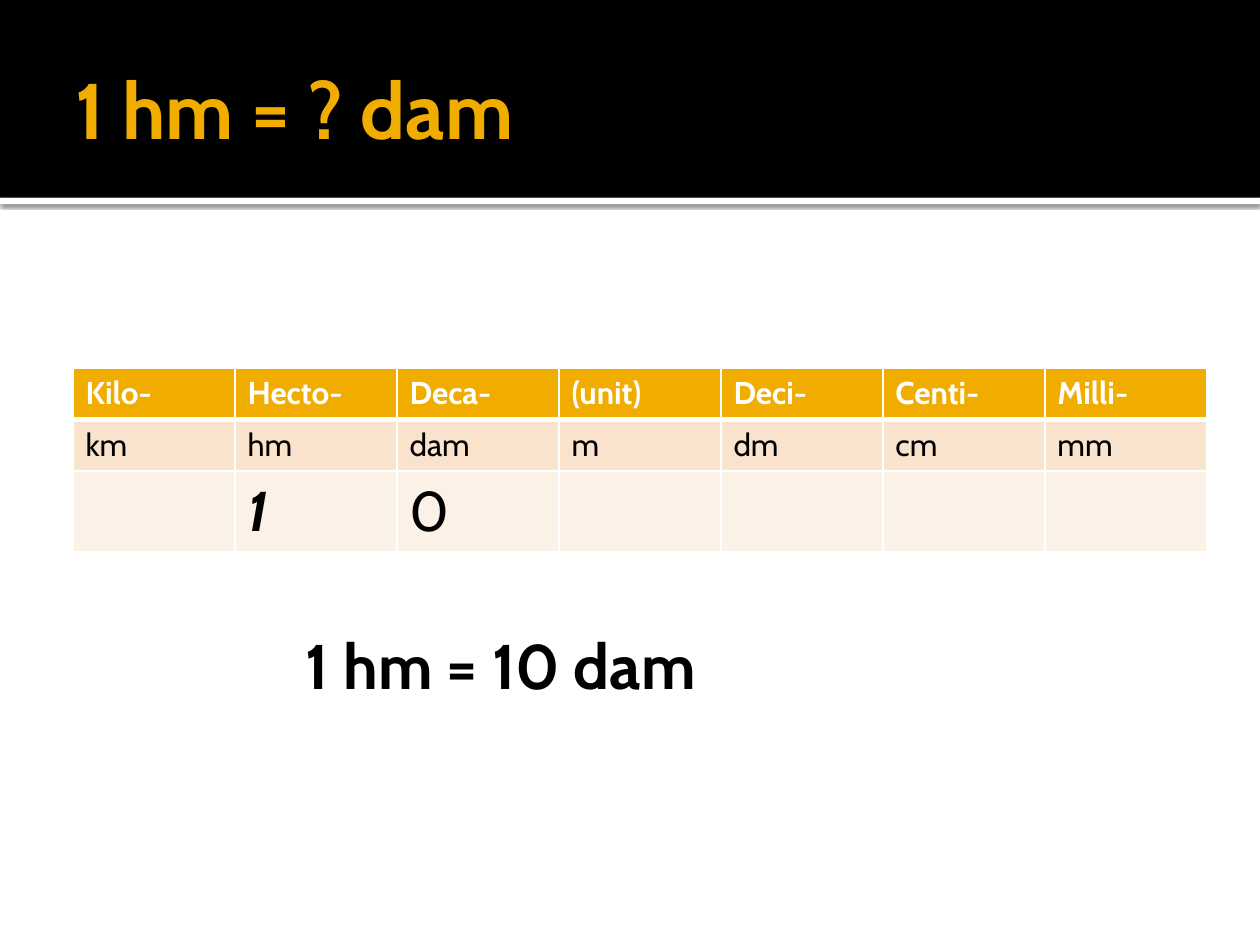
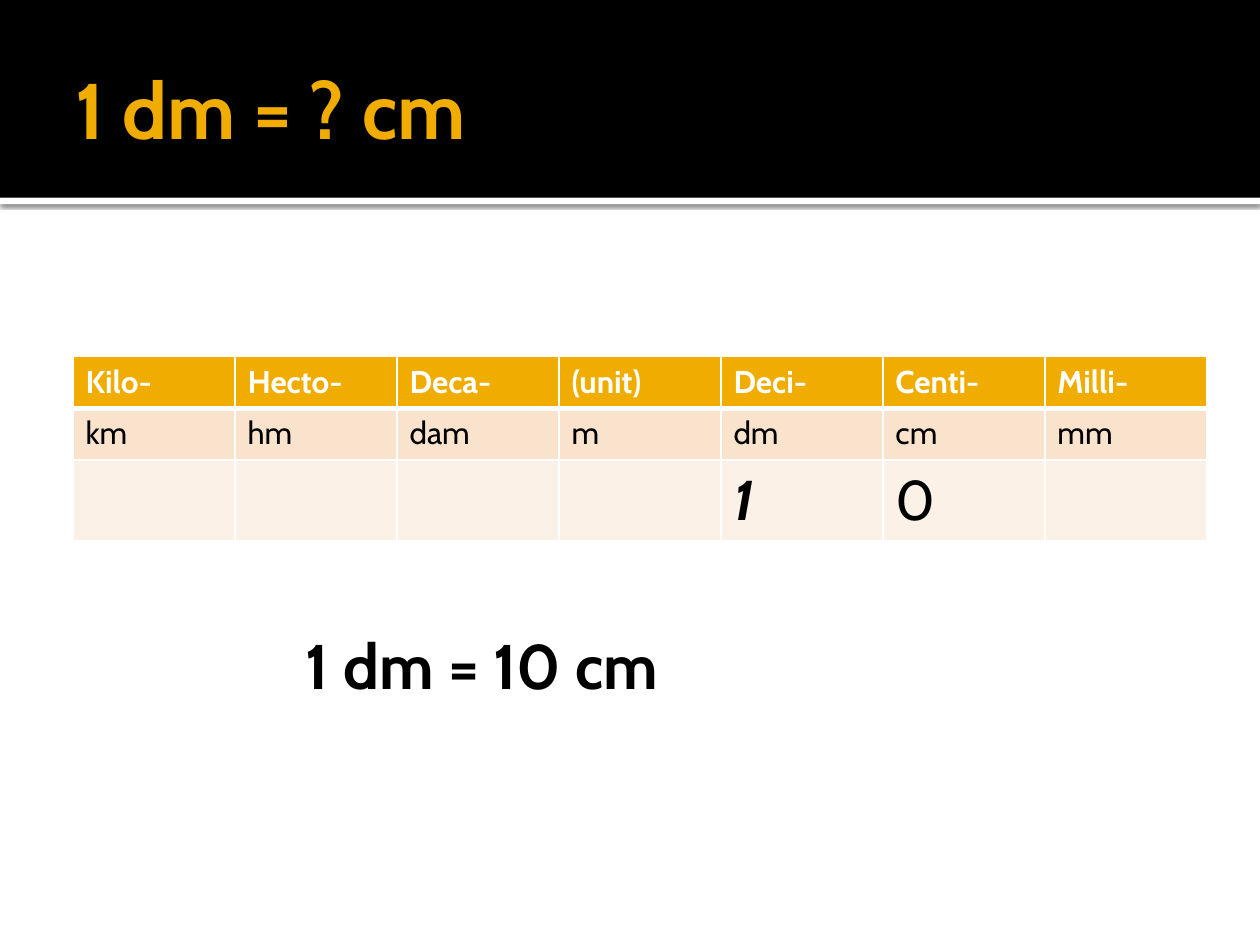
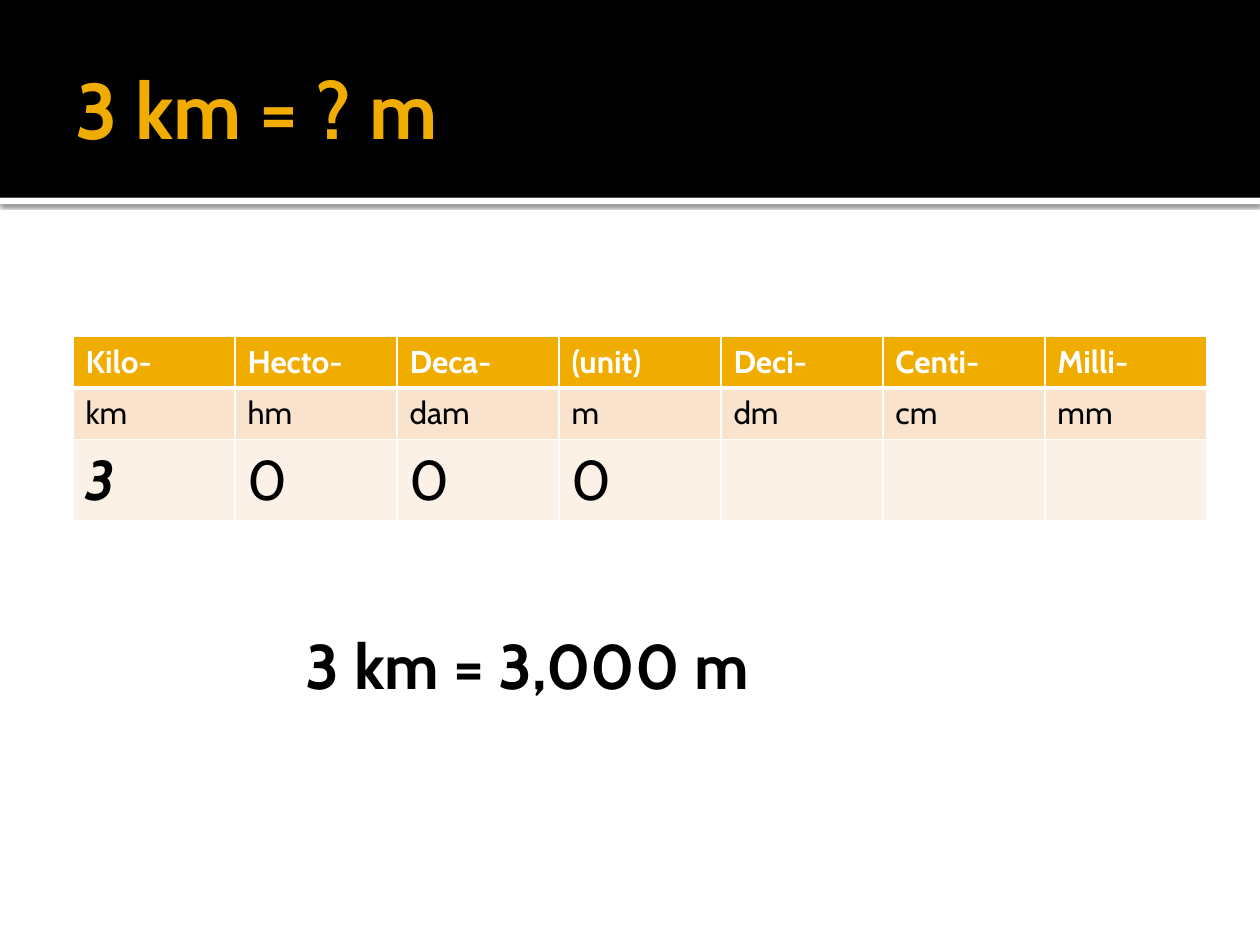
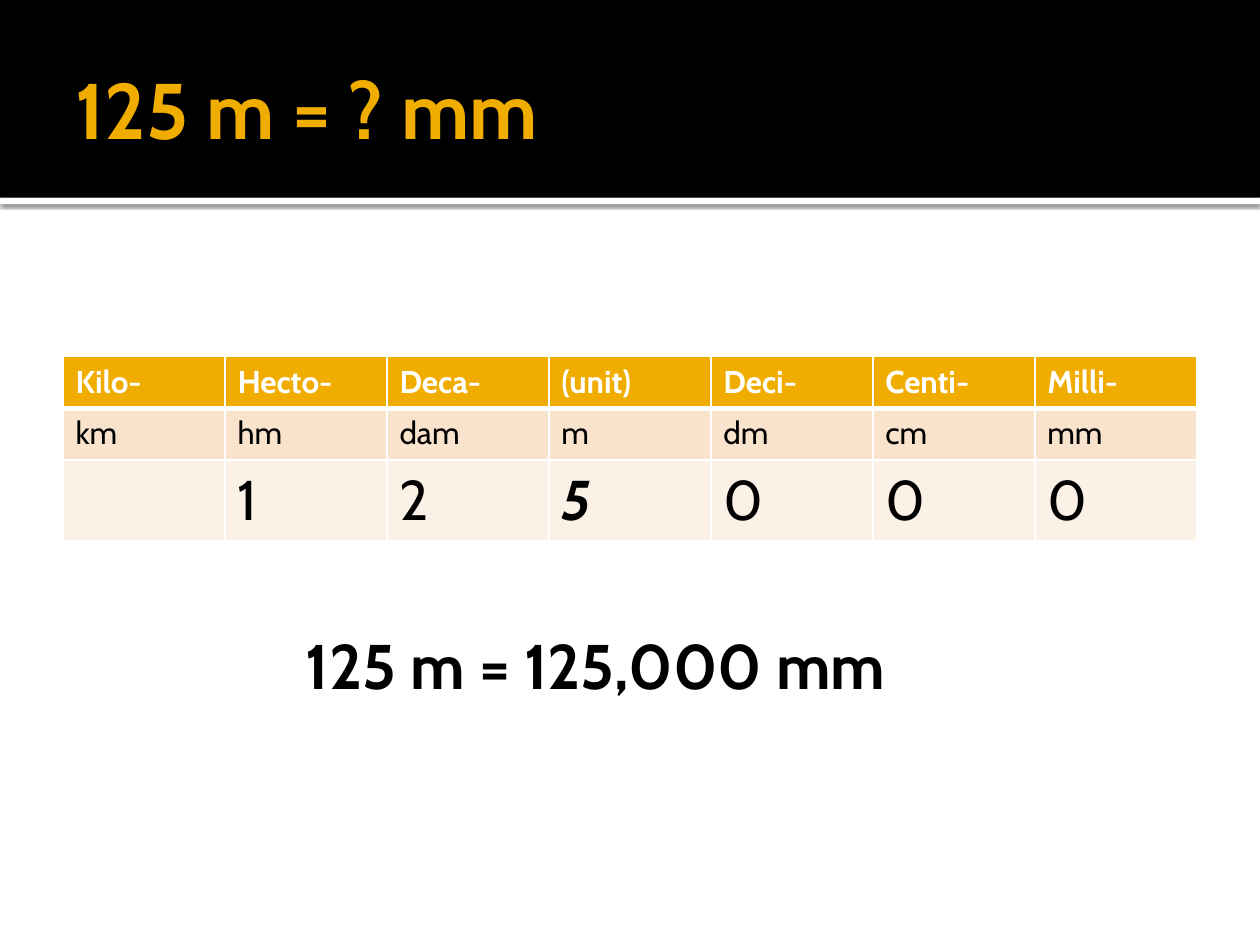
from lxml.etree import SubElement
from pptx import Presentation
from pptx.dml.color import RGBColor
from pptx.enum.shapes import MSO_SHAPE
from pptx.enum.text import MSO_ANCHOR, MSO_AUTO_SIZE, PP_ALIGN
from pptx.oxml.ns import qn
from pptx.util import Inches, Pt

# Content
HEADS = ["Kilo-", "Hecto-", "Deca-", "(unit)", "Deci-", "Centi-", "Milli-"]
UNITS = ["km", "hm", "dam", "m", "dm", "cm", "mm"]
# number, from unit, to unit, table left, table top, answer width
TASKS = [
    (1, "hm", "dam", 0.58, 2.92, 3.42),
    (1, "dm", "cm", 0.58, 2.83, 3.17),
    (3, "km", "m", 0.58, 2.67, 3.83),
    (125, "m", "mm", 0.5, 2.83, 5.33),
]

# Shared look
COLORS = {"black": "000000", "white": "FFFFFF", "gold": "F0AD00",
          "peach": "F9E3CC", "cream": "FCF1E7"}
FONT = "Cabin"
FILLS = ["gold", "peach", "cream"]
ROWS = [0.41, 0.41, 0.64]
TABLE_W = 9
BAND_H = 1.57


def rgb(name):
    return RGBColor.from_string(COLORS[name])


def write(frame, text, size=18, color="black", bold=False, italic=False):
    """Put one formatted, left-aligned line of text in a frame."""
    para = frame.paragraphs[0]
    para.alignment = PP_ALIGN.LEFT
    run = para.add_run()
    run.text = text
    font = run.font
    font.name, font.size = FONT, Pt(size)
    font.bold, font.italic = bold, italic
    font.color.rgb = rgb(color)


def add_band(slide, top, high, color):
    band = slide.shapes.add_shape(MSO_SHAPE.RECTANGLE, 0, Inches(top),
                                  Inches(10), Inches(high))
    band.shadow.inherit = False
    band.fill.solid()
    band.fill.fore_color.rgb = rgb(color)
    band.line.fill.background()
    return band


def add_shadow(shape):
    effects = shape.element.spPr.find(qn("a:effectLst"))
    outer = SubElement(effects, qn("a:outerShdw"), blurRad=str(Pt(2.5)),
                       dist=str(Pt(0.8)), dir="5400000", algn="t", rotWithShape="0")
    tint = SubElement(outer, qn("a:srgbClr"), val=COLORS["black"])
    SubElement(tint, qn("a:alpha"), val="60000")


def dress_layout(layout, slide):
    """Draw the header bands and move them behind the layout's placeholders."""
    strip = add_band(slide, BAND_H, 0.05, "white")
    add_shadow(strip)
    head = add_band(slide, 0, BAND_H, "black")
    for i, band in enumerate([strip, head]):
        band.element.nvSpPr.cNvPr.set("id", str(20 + i))
        layout.shapes.element.insert(2 + i, band.element)


def add_title(slide, text):
    title = slide.shapes.title
    title.left, title.top = Inches(0.5), Inches(0.17)
    title.width, title.height = Inches(9), Inches(1.37)
    frame = title.text_frame
    frame.vertical_anchor = MSO_ANCHOR.MIDDLE
    frame.margin_left = Inches(0.1)
    frame.margin_top = frame.margin_right = frame.margin_bottom = Inches(0.05)
    write(frame, text, size=45, color="gold", bold=True)


def add_borders(cell, row):
    """White lines, thicker between the header row and the next one."""
    widths = {"L": 1, "R": 1, "T": 3 if row == 1 else 1, "B": 3 if row == 0 else 1}
    props = cell._tc.get_or_add_tcPr()
    for side, width in widths.items():
        line = SubElement(props, qn(f"a:ln{side}"), w=str(Pt(width)))
        fill = SubElement(line, qn("a:solidFill"))
        SubElement(fill, qn("a:srgbClr"), val=COLORS["white"])


def place_digits(num, src, dst):
    """One digit per column: the last digit under src, then zeros up to dst."""
    text = str(num)
    before = src - len(text) + 1
    digits = [""] * before + list(text) + ["0"] * (dst - src)
    return digits + [""] * (len(UNITS) - len(digits))


def add_grid(slide, left, top, digits, src):
    frame = slide.shapes.add_table(len(ROWS), len(HEADS), Inches(left), Inches(top),
                                   Inches(TABLE_W), Inches(sum(ROWS)))
    table = frame.table
    for col in table.columns:
        col.width = Inches(TABLE_W / len(HEADS))
    for r, texts in enumerate([HEADS, UNITS, digits]):
        table.rows[r].height = Inches(ROWS[r])
        for c, text in enumerate(texts):
            cell = table.cell(r, c)
            add_borders(cell, r)
            cell.fill.solid()
            cell.fill.fore_color.rgb = rgb(FILLS[r])
            mark = r == 2 and c == src
            if text:
                write(cell.text_frame, text, size=32 if r == 2 else 18,
                      color="white" if r == 0 else "black",
                      bold=r == 0 or mark, italic=mark)


def add_answer(slide, text, width):
    box = slide.shapes.add_textbox(Inches(2.33), Inches(4.92),
                                   Inches(width), Inches(0.71))
    box.text_frame.word_wrap = True
    box.text_frame.auto_size = MSO_AUTO_SIZE.SHAPE_TO_FIT_TEXT
    write(box.text_frame, text, size=36, bold=True)


def main():
    prs = Presentation()
    prs.slide_width, prs.slide_height = Inches(10), Inches(7.5)
    layout = prs.slide_layouts[5]
    for i, (num, unit, goal, left, top, width) in enumerate(TASKS):
        slide = prs.slides.add_slide(layout)
        if i == 0:
            dress_layout(layout, slide)
        src, dst = UNITS.index(unit), UNITS.index(goal)
        add_title(slide, f"{num} {unit} = ? {goal}")
        add_grid(slide, left, top, place_digits(num, src, dst), src)
        total = num * 10 ** (dst - src)
        add_answer(slide, f"{num} {unit} = {total:,} {goal}", width)
    prs.save("out.pptx")


if __name__ == "__main__":
    main()
